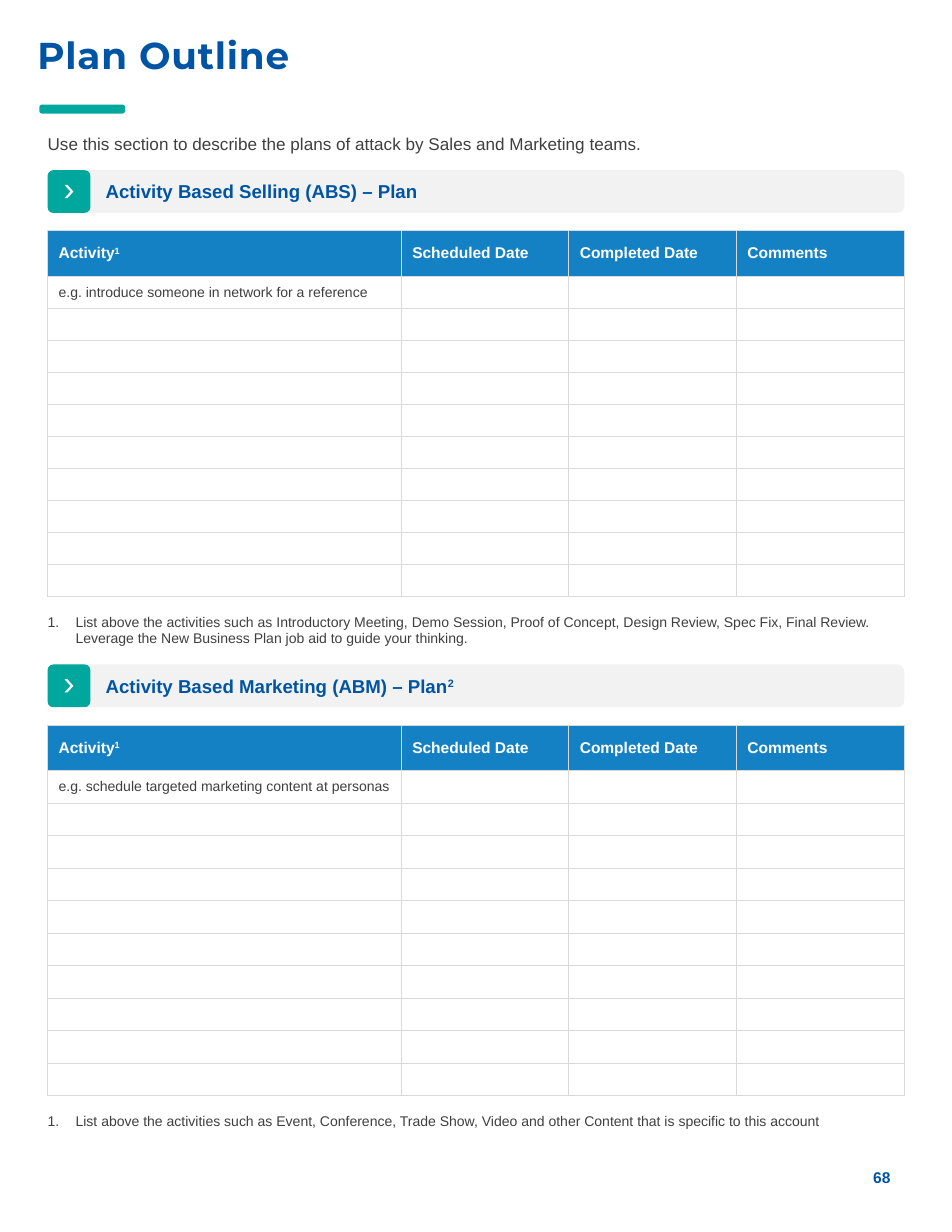
from lxml import etree
from pptx import Presentation
from pptx.dml.color import RGBColor
from pptx.enum import shapes, text
from pptx.oxml.ns import qn
from pptx.util import Cm, Pt

BLUE, TEAL, HEAD, GREY, BORDER, INK, WHITE = (
    "0054A4", "00A79D", "1481C4", "F2F2F2", "D9D9D9", "3F3F3F", "FFFFFF")

INTRO = "Use this section to describe the plans of attack by Sales and Marketing teams."
# A header is a (text, superscript) pair
HEADERS = [("Activity", "1"), ("Scheduled Date", ""), ("Completed Date", ""), ("Comments", "")]
COL_WIDTHS = [8.02, 3.8, 3.8, 3.81]
EMPTY_ROWS = 9
HEADER_H = 1.04
LEFT, WIDTH, BAR_H = 1.08, 19.43, 0.97

SECTIONS = [
    dict(title=("Activity Based Selling (ABS) – Plan", ""), top=3.86, row_h=0.725,
         example="e.g. introduce someone in network for a reference",
         note="List above the activities such as Introductory Meeting, Demo Session, "
              "Proof of Concept, Design Review, Spec Fix, Final Review. Leverage the "
              "New Business Plan job aid to guide your thinking.",
         note_top=13.9, note_h=0.77),
    dict(title=("Activity Based Marketing (ABM) – Plan", "2"), top=15.07, row_h=0.737,
         example="e.g. schedule targeted marketing content at personas",
         note="List above the activities such as Event, Conference, Trade Show, Video "
              "and other Content that is specific to this account",
         note_top=25.22, note_h=0.38),
]


def rgb(value):
    return RGBColor.from_string(value)


def fill(obj, color):
    obj.fill.solid()
    obj.fill.fore_color.rgb = rgb(color)


def write(p, content, size, color, bold=False, font="Arial", sup=""):
    p.font.name, p.font.size, p.font.bold = font, Pt(size), bold
    p.font.color.rgb = rgb(color)
    r = p.add_run()
    r.text = content
    if sup:
        s = p.add_run()
        s.text = sup
        s.font._element.set("baseline", "30000")
    return r


def set_frame(tf, left=0, right=0, top=0, bottom=0):
    tf.word_wrap = True
    tf.vertical_anchor = text.MSO_ANCHOR.MIDDLE
    tf.margin_left, tf.margin_right = Cm(left), Cm(right)
    tf.margin_top, tf.margin_bottom = Cm(top), Cm(bottom)
    return tf.paragraphs[0]


def add_text(slide, x, y, w, h, **insets):
    box = slide.shapes.add_textbox(Cm(x), Cm(y), Cm(w), Cm(h))
    return set_frame(box.text_frame, **insets)


def add_block(slide, kind, x, y, w, h, color, adj=None):
    sp = slide.shapes.add_shape(kind, Cm(x), Cm(y), Cm(w), Cm(h))
    sp.shadow.inherit = False
    fill(sp, color)
    sp.line.fill.background()
    if adj is not None:
        sp.adjustments[0] = adj
    return sp


def add_borders(cell):
    tc_pr = cell._tc.get_or_add_tcPr()
    for i, side in enumerate(("lnL", "lnR", "lnT", "lnB")):
        ln = etree.Element(qn("a:" + side), w=str(Pt(0.5)))
        solid = etree.SubElement(ln, qn("a:solidFill"))
        etree.SubElement(solid, qn("a:srgbClr"), val=BORDER)
        tc_pr.insert(i, ln)


def add_plan_table(slide, top, row_h, example):
    rows = [HEADERS, [(example, "")] + [("", "")] * 3] + [[("", "")] * 4] * EMPTY_ROWS
    heights = [HEADER_H] + [row_h] * (len(rows) - 1)
    table = slide.shapes.add_table(len(rows), len(HEADERS), Cm(LEFT), Cm(top),
                                   Cm(WIDTH), Cm(sum(heights))).table
    for col, w in zip(table.columns, COL_WIDTHS):
        col.width = Cm(w)
    for i, (row, h) in enumerate(zip(rows, heights)):
        table.rows[i].height = Cm(h)
        style = (10, WHITE, True) if i == 0 else (9, INK, False)
        for j, (content, sup) in enumerate(row):
            cell = table.cell(i, j)
            fill(cell, HEAD if i == 0 else WHITE)
            add_borders(cell)
            cell.vertical_anchor = text.MSO_ANCHOR.MIDDLE
            cell.margin_left = cell.margin_right = Cm(0.25)
            cell.margin_top = cell.margin_bottom = 0
            p = cell.text_frame.paragraphs[0]
            if content:
                write(p, content, *style, sup=sup)
            else:  # keeps an empty row from growing to the default text size
                p._p.get_or_add_endParaRPr().set("sz", "900")


def add_section(slide, title, top, row_h, example, note, note_top, note_h):
    rounded = shapes.MSO_SHAPE.ROUNDED_RECTANGLE
    bar = add_block(slide, rounded, LEFT, top, WIDTH, BAR_H, GREY, 0.165)
    p = set_frame(bar.text_frame, left=1.27, right=0.25)
    p.alignment = text.PP_ALIGN.LEFT
    write(p, title[0], 12, BLUE, True, sup=title[1])
    add_block(slide, rounded, LEFT, top, BAR_H, BAR_H, TEAL, 0.132)
    w, h = 0.2, 0.3
    add_block(slide, shapes.MSO_SHAPE.CHEVRON, LEFT + (BAR_H - w) / 2,
              top + (BAR_H - h) / 2, w, h, WHITE, 0.672)

    add_plan_table(slide, top + 1.37, row_h, example)

    p = add_text(slide, LEFT, note_top, WIDTH, note_h)
    p_pr = p._p.get_or_add_pPr()
    p_pr.set("marL", str(Cm(0.635)))
    p_pr.set("indent", str(-Cm(0.635)))
    etree.SubElement(p_pr, qn("a:buFont"), typeface="+mj-lt")
    etree.SubElement(p_pr, qn("a:buAutoNum"), type="arabicPeriod")
    write(p, note, 9, INK)


def main():
    prs = Presentation()
    prs.slide_width, prs.slide_height = Cm(21.59), Cm(27.94)
    slide = prs.slides.add_slide(prs.slide_layouts[6])

    rule = add_block(slide, shapes.MSO_SHAPE.ROUNDED_RECTANGLE, 0.93, 2.41, 1.87, 0.13, TEAL)
    rule.line.color.rgb = rgb(TEAL)
    rule.line.width = Pt(2)

    p = add_text(slide, 0.6, 0, 20.99, 2.49, left=0.25, right=0.25, top=0.13, bottom=0.13)
    r = write(p, "Plan Outline", 24, BLUE, True, "Montserrat")
    r.font._element.set("spc", "50")

    write(add_text(slide, LEFT, 3.02, WIDTH, 0.48), INTRO, 11, INK)
    for section in SECTIONS:
        add_section(slide, **section)

    p = add_text(slide, 19.48, 26.09, 1.04, 1.22)
    p.alignment = text.PP_ALIGN.CENTER
    write(p, "68", 10, BLUE, True)
    prs.save("out.pptx")


if __name__ == "__main__":
    main()
